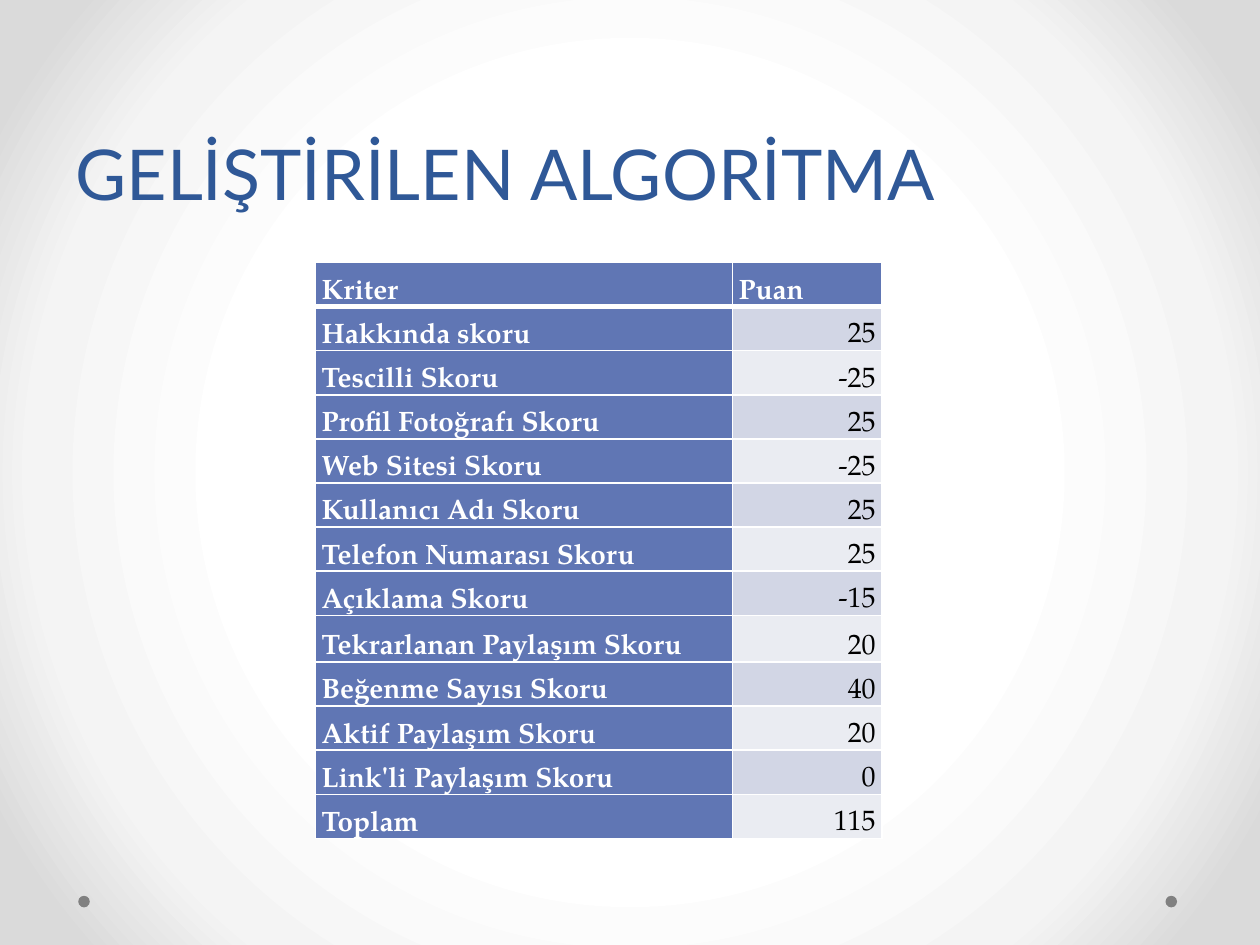
from dataclasses import dataclass

from lxml.etree import fromstring
from pptx import Presentation
from pptx.dml.color import RGBColor
from pptx.enum.shapes import MSO_SHAPE
from pptx.enum.text import MSO_ANCHOR, MSO_AUTO_SIZE, PP_ALIGN
from pptx.oxml.ns import nsdecls
from pptx.util import Pt


@dataclass(frozen=True)
class Theme:
    title_font: str = "Lato"
    body_font: str = "TeX Gyre Pagella"
    title_size: int = 40
    body_size: int = 16
    title: str = "2F5897"
    header: str = "6076B4"
    bands: tuple = ("D2D6E5", "EAECF2")
    light: str = "FFFFFF"
    dark: str = "000000"
    dot: str = "808080"
    backdrop: tuple = ((50, "FFFFFF"), (76, "F4F4F4"), (92, "DADADA"))


class SlideBuilder:
    def __init__(self, prs, theme):
        self.theme = theme
        self.s = prs.slides.add_slide(prs.slide_layouts[5])

    def background(self):
        stops = "".join(
            f'<a:gs pos="{pos * 1000}"><a:srgbClr val="{color}"/></a:gs>'
            for pos, color in self.theme.backdrop)
        bg = fromstring(
            f'<p:bg {nsdecls("p", "a")}><p:bgPr><a:gradFill rotWithShape="1">'
            f'<a:gsLst>{stops}</a:gsLst><a:path path="circle">'
            '<a:fillToRect l="50000" t="50000" r="50000" b="50000"/></a:path>'
            '</a:gradFill><a:effectLst/></p:bgPr></p:bg>')
        self.s._element.cSld.insert(0, bg)

    def run(self, p, text, font, size, color, bold=False):
        r = p.add_run()
        r.text = text
        r.font.name, r.font.size, r.font.bold = font, Pt(size), bold
        r.font.color.rgb = RGBColor.from_string(color)

    def title(self, text, x, y, w, h):
        sp = self.s.shapes.title
        sp.left, sp.top, sp.width, sp.height = Pt(x), Pt(y), Pt(w), Pt(h)
        tf = sp.text_frame
        tf.auto_size = MSO_AUTO_SIZE.NONE
        tf.word_wrap = True
        tf.vertical_anchor = MSO_ANCHOR.BOTTOM
        p = tf.paragraphs[0]
        p.alignment = PP_ALIGN.LEFT
        p.line_spacing = Pt(58)
        self.run(p, text, self.theme.title_font, self.theme.title_size, self.theme.title)

    def dot(self, x, y, size):
        sp = self.s.shapes.add_shape(MSO_SHAPE.OVAL, Pt(x), Pt(y), Pt(size), Pt(size))
        sp.shadow.inherit = False
        sp.fill.solid()
        sp.fill.fore_color.rgb = RGBColor.from_string(self.theme.dot)
        sp.line.fill.background()

    def borders(self, cell, top, bottom):
        tc_pr = cell._tc.get_or_add_tcPr()
        widths = {"L": 1, "R": 1, "T": top, "B": bottom}
        for i, (side, width) in enumerate(widths.items()):
            tc_pr.insert(i, fromstring(
                f'<a:ln{side} {nsdecls("a")} w="{Pt(width)}"><a:solidFill>'
                f'<a:srgbClr val="{self.theme.light}"/></a:solidFill></a:ln{side}>'))

    def cell(self, cell, text, fill, color, bold, align):
        cell.margin_left = cell.margin_right = Pt(3.6)
        cell.margin_top = cell.margin_bottom = 0
        cell.vertical_anchor = MSO_ANCHOR.BOTTOM
        cell.fill.solid()
        cell.fill.fore_color.rgb = RGBColor.from_string(fill)
        p = cell.text_frame.paragraphs[0]
        p.alignment = align
        p.line_spacing = 1.15
        self.run(p, text, self.theme.body_font, self.theme.body_size, color, bold)

    def table(self, rows, x, y, col_widths, row_heights):
        t = self.theme
        table = self.s.shapes.add_table(
            len(rows), len(col_widths), Pt(x), Pt(y),
            Pt(sum(col_widths)), Pt(sum(row_heights))).table
        for column, width in zip(table.columns, col_widths):
            column.width = Pt(width)
        for i, (row, height) in enumerate(zip(rows, row_heights)):
            table.rows[i].height = Pt(height)
            for j, text in enumerate(row):
                cell = table.cell(i, j)
                if i == 0 or j == 0:
                    self.cell(cell, text, t.header, t.light, True, PP_ALIGN.LEFT)
                else:
                    self.cell(cell, text, t.bands[(i - 1) % 2], t.dark, False, PP_ALIGN.RIGHT)
                # A heavy rule parts the header from the scores
                self.borders(cell, top=3 if i == 1 else 1, bottom=3 if i == 0 else 1)


SCORES = [
    ("Kriter", "Puan"),
    ("Hakkında skoru", "25"),
    ("Tescilli Skoru", "-25"),
    ("Profil Fotoğrafı Skoru", "25"),
    ("Web Sitesi Skoru", "-25"),
    ("Kullanıcı Adı Skoru", "25"),
    ("Telefon Numarası Skoru", "25"),
    ("Açıklama Skoru", "-15"),
    ("Tekrarlanan Paylaşım Skoru", "20"),
    ("Beğenme Sayısı Skoru", "40"),
    ("Aktif Paylaşım Skoru", "20"),
    ("Link'li Paylaşım Skoru", "0"),
    ("Toplam", "115"),
]


def main():
    prs = Presentation()
    prs.slide_width, prs.slide_height = Pt(720), Pt(540)
    slide = SlideBuilder(prs, Theme())

    # Backdrop and corner dots
    slide.background()
    for x in (44.7, 666):
        slide.dot(x, 511.9, 6.6)

    # Title
    slide.title("GELİŞTİRİLEN ALGORİTMA", 36, 0, 648, 126)

    # Score table, with one slightly taller row
    heights = [25.2] * len(SCORES)
    heights[8] = 26.7
    slide.table(SCORES, 180.2, 150, (238.3, 85.5), heights)

    prs.save("out.pptx")


if __name__ == "__main__":
    main()
